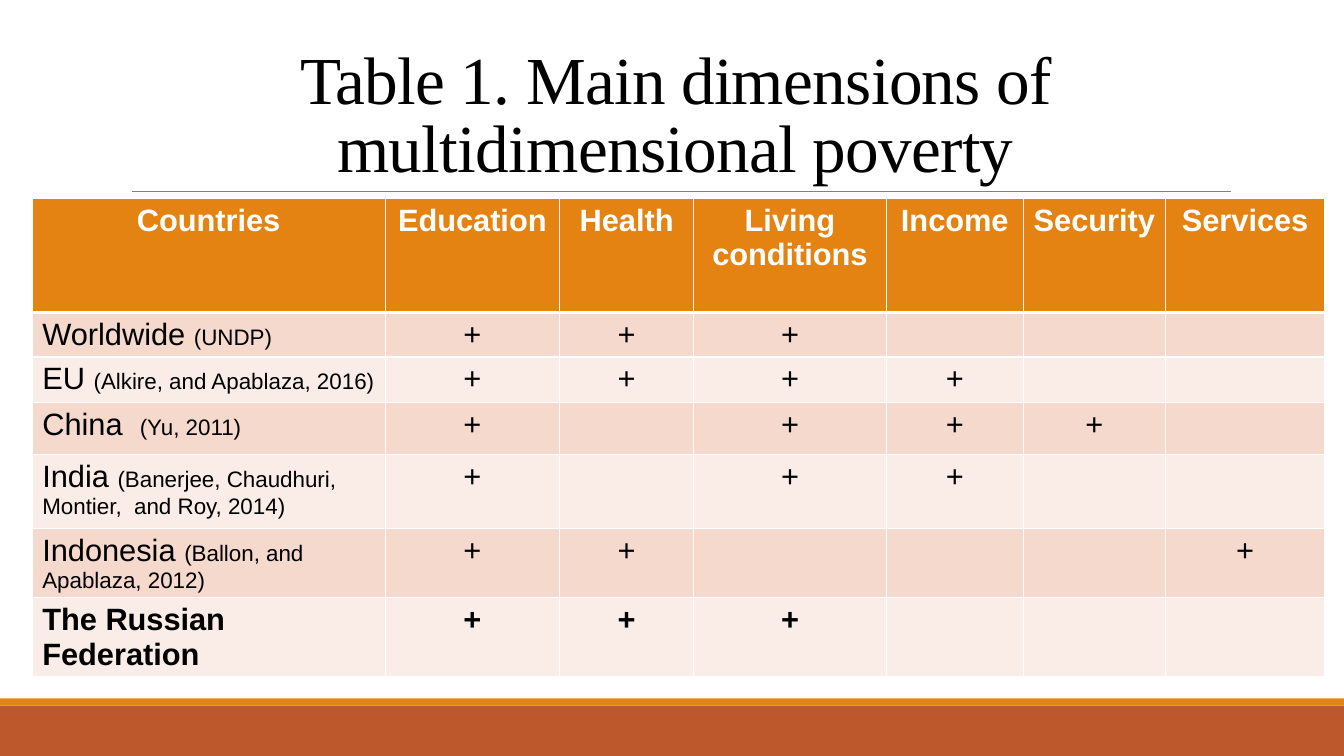
from dataclasses import dataclass

import lxml.etree
import pptx
import pptx.dml.color
import pptx.enum.shapes
import pptx.enum.text
import pptx.oxml.ns
import pptx.util

Inches = pptx.util.Inches
Pt = pptx.util.Pt
qn = pptx.oxml.ns.qn

COLORS = {
    "footer": "BD582C",
    "accent": "E48312",
    "rule": "808080",
    "text": "000000",
    "white": "FFFFFF",
    "odd_row": "F5D9CC",
    "even_row": "FAEDE7",
}
BODY_FONT = "Arial"
BODY_SIZE = 22
CITATION_SIZE = 16


@dataclass(frozen=True)
class Band:
    top: float
    height: float
    color: str


@dataclass(frozen=True)
class Dimension:
    name: str
    width: float


@dataclass(frozen=True)
class Country:
    name: str
    citation: str
    marks: str  # one character per dimension, "+" where it is measured
    height: float
    bold: bool = False


BANDS = [Band(7, 0.5, "footer"), Band(6.93, 0.07, "accent")]
COUNTRY_WIDTH = 3.5
HEADER_HEIGHT = 1.13
DIMENSIONS = [
    Dimension("Education", 1.73),
    Dimension("Health", 1.33),
    Dimension("Living conditions", 1.91),
    Dimension("Income", 1.36),
    Dimension("Security", 1.41),
    Dimension("Services", 1.58),
]
COUNTRIES = [
    Country("Worldwide ", "(UNDP)", "+++---", 0.44),
    Country("EU ", "(Alkire, and Apablaza, 2016)", "++++--", 0.45),
    Country("China  ", "(Yu, 2011)", "+-+++-", 0.52),
    Country("India ", "(Banerjee, Chaudhuri, Montier,  and Roy, 2014)", "+-++--", 0.73),
    Country("Indonesia ", "(Ballon, and Apablaza, 2012)", "++---+", 0.55),
    Country("The Russian Federation", "", "+++---", 0.44, bold=True),
]


def rgb(color: str) -> pptx.dml.color.RGBColor:
    return pptx.dml.color.RGBColor.from_string(COLORS[color])


def add_band(slide, band: Band, width: int) -> None:
    bar = slide.shapes.add_shape(
        pptx.enum.shapes.MSO_SHAPE.RECTANGLE, 0, Inches(band.top), width, Inches(band.height)
    )
    bar.shadow.inherit = False
    bar.fill.solid()
    bar.fill.fore_color.rgb = rgb(band.color)
    bar.line.fill.background()


def add_title_rule(slide) -> None:
    rule = slide.shapes.add_connector(
        pptx.enum.shapes.MSO_CONNECTOR.STRAIGHT,
        Inches(1.31), Inches(1.9), Inches(12.21), Inches(1.9),
    )
    rule.line.color.rgb = rgb("rule")
    rule.line.width = Pt(0.5)
    lxml.etree.SubElement(rule._element.spPr, qn("a:effectLst"))


def style_paragraph(paragraph, font: str, size: float, color: str, bold: bool, centered: bool) -> None:
    paragraph.font.name = font
    paragraph.font.size = Pt(size)
    paragraph.font.color.rgb = rgb(color)
    paragraph.font.bold = bold
    align = pptx.enum.text.PP_ALIGN
    paragraph.alignment = align.CENTER if centered else align.LEFT


def fill_title(title) -> None:
    title.left, title.top = Inches(1.2), Inches(0.31)
    title.width, title.height = Inches(11), Inches(1.59)
    frame = title.text_frame
    frame.text = "Table 1. Main dimensions of multidimensional poverty"
    frame.word_wrap = True
    frame.auto_size = pptx.enum.text.MSO_AUTO_SIZE.NONE
    frame.vertical_anchor = pptx.enum.text.MSO_ANCHOR.BOTTOM
    heading = frame.paragraphs[0]
    style_paragraph(heading, "Times New Roman", 48, "text", bold=False, centered=True)
    heading.line_spacing = 0.85
    heading.runs[0]._r.get_or_add_rPr().set("spc", "-50")


def set_borders(cell, top: float, bottom: float) -> None:
    """Draw white borders; must run before the cell fill, which follows them in the XML."""
    properties = cell._tc.get_or_add_tcPr()
    for side, width in {"lnL": 1, "lnR": 1, "lnT": top, "lnB": bottom}.items():
        border = lxml.etree.SubElement(properties, qn(f"a:{side}"), w=str(Pt(width)))
        fill = lxml.etree.SubElement(border, qn("a:solidFill"))
        lxml.etree.SubElement(fill, qn("a:srgbClr"), val=COLORS["white"])


def format_cell(cell, row: int) -> None:
    set_borders(cell, top=3 if row == 1 else 1, bottom=3 if row == 0 else 1)
    cell.fill.solid()
    cell.fill.fore_color.rgb = rgb("accent" if row == 0 else "odd_row" if row % 2 else "even_row")


def write_cell(cell, text: str, color: str, bold: bool, centered: bool = True, citation: str = "") -> None:
    paragraph = cell.text_frame.paragraphs[0]
    style_paragraph(paragraph, BODY_FONT, BODY_SIZE, color, bold, centered)
    paragraph.add_run().text = text
    if citation:
        source = paragraph.add_run()
        source.text = citation
        source.font.size = Pt(CITATION_SIZE)


def add_poverty_table(slide) -> None:
    widths = [COUNTRY_WIDTH] + [dimension.width for dimension in DIMENSIONS]
    heights = [HEADER_HEIGHT] + [country.height for country in COUNTRIES]
    holder = slide.shapes.add_table(
        len(heights), len(widths), Inches(0.32), Inches(1.97), Inches(12.82), Inches(4.88)
    )
    table = holder.table
    for column, width in zip(table.columns, widths):
        column.width = Inches(width)
    for row, height in zip(table.rows, heights):
        row.height = Inches(height)
    for index, row in enumerate(table.rows):
        for cell in row.cells:
            format_cell(cell, index)

    headings = ["Countries"] + [dimension.name for dimension in DIMENSIONS]
    for column, heading in enumerate(headings):
        write_cell(table.cell(0, column), heading, "white", bold=True)
    for row, country in enumerate(COUNTRIES, start=1):
        write_cell(
            table.cell(row, 0), country.name, "text", country.bold,
            centered=False, citation=country.citation,
        )
        for column, mark in enumerate(country.marks, start=1):
            if mark == "+":
                write_cell(table.cell(row, column), mark, "text", country.bold)


def main() -> None:
    presentation = pptx.Presentation()
    presentation.slide_width = Inches(13.33)
    presentation.slide_height = Inches(7.5)
    title_only = presentation.slide_layouts.get_by_name("Title Only")
    slide = presentation.slides.add_slide(title_only)
    for band in BANDS:
        add_band(slide, band, presentation.slide_width)
    add_title_rule(slide)
    fill_title(slide.shapes.title)
    add_poverty_table(slide)
    presentation.save("out.pptx")


if __name__ == "__main__":
    main()
